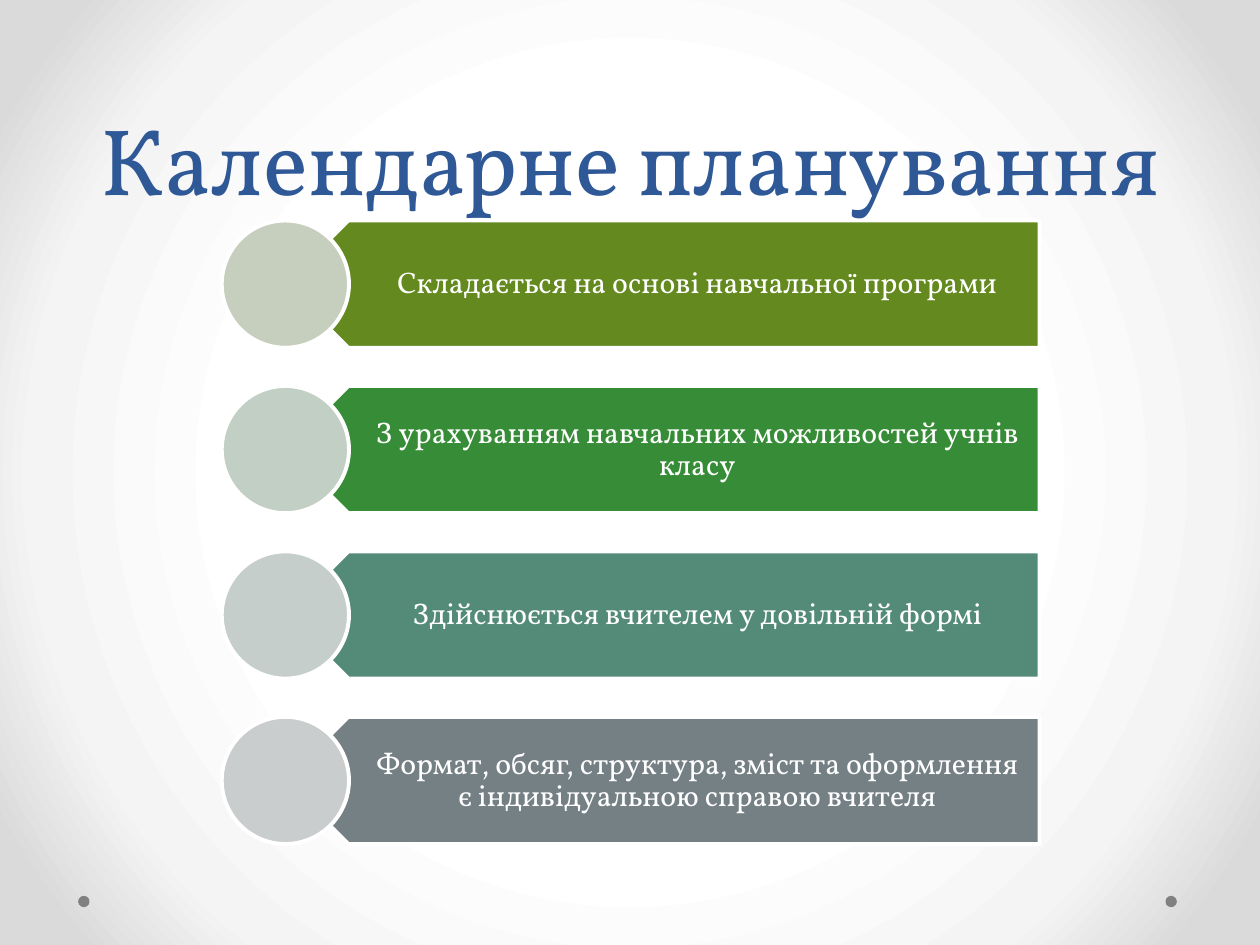
"""Build a slide on calendar planning with four labelled rows."""
from pptx import Presentation
from pptx.dml.color import RGBColor
from pptx.enum.shapes import MSO_SHAPE
from pptx.enum.text import MSO_ANCHOR, MSO_AUTO_SIZE, PP_ALIGN
from pptx.oxml import parse_xml
from pptx.oxml.ns import nsdecls
from pptx.util import Inches, Pt

FONT = "Vollkorn"
WHITE = RGBColor(0xFF, 0xFF, 0xFF)
BLUE = RGBColor(0x2F, 0x58, 0x97)
GRAY = RGBColor(0x80, 0x80, 0x80)
ROWS = [
    ("Складається на основі навчальної програми",
     RGBColor(0x63, 0x89, 0x1F), RGBColor(0xC6, 0xCF, 0xBD)),
    ("З урахуванням навчальних можливостей учнів класу",
     RGBColor(0x37, 0x8D, 0x37), RGBColor(0xC2, 0xCF, 0xC4)),
    ("Здійснюється вчителем у довільній формі",
     RGBColor(0x53, 0x8B, 0x78), RGBColor(0xC6, 0xCE, 0xCC)),
    ("Формат, обсяг, структура, зміст та оформлення є індивідуальною справою вчителя",
     RGBColor(0x75, 0x80, 0x85), RGBColor(0xCA, 0xCD, 0xCE)),
]
STOPS = [(50, "FFFFFF"), (76, "F4F4F4"), (92, "DADADA")]
TOP, STEP, SIZE = 1.75, 1.313, 1.01


def draw(kind, left, top, width, height, color, edge=None):
    shape = slide.shapes.add_shape(
        kind, Inches(left), Inches(top), Inches(width), Inches(height))
    shape.shadow.inherit = False
    shape.fill.solid()
    shape.fill.fore_color.rgb = color
    if edge is None:
        shape.line.fill.background()
    else:
        shape.line.color.rgb = edge
        shape.line.width = Pt(2.25)
    return shape


def style(text, size, color, space):
    text.alignment = PP_ALIGN.CENTER
    text.line_spacing = space
    text.font.name = FONT
    text.font.size = Pt(size)
    text.font.color.rgb = color


deck = Presentation()
deck.slide_width, deck.slide_height = Inches(10), Inches(7.5)
slide = deck.slides.add_slide(deck.slide_layouts[5])

stops = "".join(
    f'<a:gs pos="{pos * 1000}"><a:srgbClr val="{color}"/></a:gs>'
    for pos, color in STOPS)
slide.element.cSld.insert(0, parse_xml(
    f'<p:bg {nsdecls("p", "a")}><p:bgPr><a:gradFill rotWithShape="1">'
    f'<a:gsLst>{stops}</a:gsLst><a:path path="circle">'
    '<a:fillToRect l="50000" t="50000" r="50000" b="50000"/></a:path>'
    '</a:gradFill><a:effectLst/></p:bgPr></p:bg>'))

for left in (9.25, 0.62):
    draw(MSO_SHAPE.OVAL, left, 7.11, 0.09, 0.09, GRAY)

title = slide.shapes.title
title.left, title.top = Inches(0.5), Inches(0)
title.width, title.height = Inches(9), Inches(1.75)
frame = title.text_frame
frame.text = "Календарне планування"
frame.auto_size = MSO_AUTO_SIZE.NONE
frame.vertical_anchor = MSO_ANCHOR.BOTTOM
style(frame.paragraphs[0], 54, BLUE, Pt(58))

for row, (label, dark, light) in enumerate(ROWS):
    top = TOP + row * STEP
    arrow = draw(MSO_SHAPE.PENTAGON, 2.26, top, 5.99, SIZE, dark, WHITE)
    arrow.rotation = 180
    box = slide.shapes.add_textbox(
        Inches(2.51), Inches(top), Inches(5.73), Inches(SIZE))
    frame = box.text_frame
    frame.word_wrap = True
    frame.vertical_anchor = MSO_ANCHOR.MIDDLE
    frame.margin_left, frame.margin_right = Inches(0.45), Inches(0.13)
    frame.margin_top = frame.margin_bottom = Inches(0.07)
    frame.text = label
    style(frame.paragraphs[0], 17, WHITE, 0.9)
    draw(MSO_SHAPE.OVAL, 1.76, top, SIZE, SIZE, light, WHITE)

deck.save("out.pptx")
